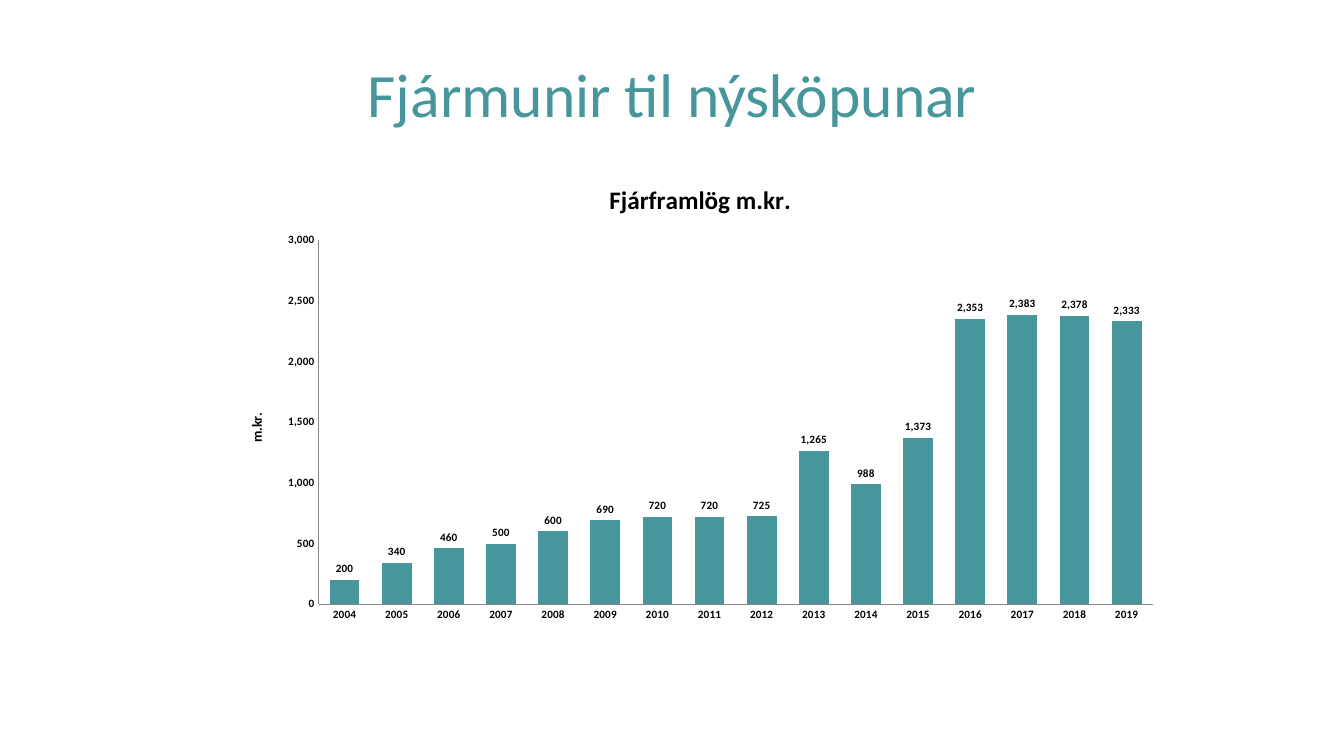
from lxml import etree
from pptx import Presentation
from pptx.chart.data import CategoryChartData
from pptx.dml.color import RGBColor
from pptx.enum import chart as ch, text
from pptx.oxml.ns import qn
from pptx.util import Inches, Pt

TEAL = RGBColor(0x46, 0x96, 0x9B)
BLACK = RGBColor(0, 0, 0)
GREY = RGBColor(0x86, 0x86, 0x86)
FUNDING = [200, 340, 460, 500, 600, 690, 720, 720, 725, 1265, 988, 1373,
           2353, 2383, 2378, 2333]
NUMBER_FORMAT = "#,##0"


def style(font, size, color=BLACK, bold=True):
    font.name = "Calibri"
    font.size = Pt(size)
    font.bold = bold
    font.color.rgb = color


prs = Presentation()
prs.slide_width, prs.slide_height = Inches(13.33), Inches(7.5)
s = prs.slides.add_slide(prs.slide_layouts[6])

# Heading
tf = s.shapes.add_textbox(Inches(0.67), Inches(0.3), Inches(12), Inches(1.25)).text_frame
tf.word_wrap = True
tf.vertical_anchor = text.MSO_ANCHOR.MIDDLE
tf.text = "Fjármunir til nýsköpunar"
p = tf.paragraphs[0]
p.alignment = text.PP_ALIGN.CENTER
style(p.runs[0].font, 44, TEAL, bold=False)

# Funding per year
data = CategoryChartData(number_format=NUMBER_FORMAT)
data.categories = [str(year) for year in range(2004, 2020)]
data.add_series("Fjárframlög m.kr.", FUNDING)
chart = s.shapes.add_chart(ch.XL_CHART_TYPE.COLUMN_CLUSTERED, Inches(2.26), Inches(1.62),
                           Inches(9.37), Inches(4.65), data).chart
style(chart.font, 10, bold=False)
chart.has_legend = False
chart.has_title = True
chart.chart_title.include_in_layout = False

plot = chart.plots[0]
plot.gap_width = 75
plot.vary_by_categories = False
fill = plot.series[0].format.fill
fill.solid()
fill.fore_color.rgb = TEAL
plot.has_data_labels = True
labels = plot.data_labels
labels.show_value = True
labels.number_format = NUMBER_FORMAT
labels.number_format_is_linked = False
labels.position = ch.XL_LABEL_POSITION.OUTSIDE_END
style(labels.font, 8)

value_axis = chart.value_axis
value_axis.has_major_gridlines = False
value_axis.minimum_scale, value_axis.maximum_scale = 0, 3000
value_axis.major_unit = 500
value_axis.tick_labels.number_format = NUMBER_FORMAT
value_axis.tick_labels.number_format_is_linked = False
for axis in (chart.category_axis, value_axis):
    axis.major_tick_mark = axis.minor_tick_mark = ch.XL_TICK_MARK.NONE
    axis.format.line.color.rgb = GREY
    axis.format.line.width = Pt(0.75)
    style(axis.tick_labels.font, 8)

for title, words, size in ((chart.chart_title, "Fjárframlög m.kr.", 18),
                           (value_axis.axis_title, "m.kr.", 10)):
    title.text_frame.text = words
    style(title.text_frame.paragraphs[0].runs[0].font, size)

# Fixed inner plot area, as fractions of the chart frame
plot_area = chart._chartSpace.chart.plotArea
for old in plot_area.findall(qn("c:layout")):
    plot_area.remove(old)
layout = etree.Element(qn("c:layout"))
plot_area.insert(0, layout)
manual = etree.SubElement(layout, qn("c:manualLayout"))
for tag, val in (("layoutTarget", "inner"), ("xMode", "edge"), ("yMode", "edge"),
                 ("x", "0.096"), ("y", "0.164"), ("w", "0.883"), ("h", "0.777")):
    etree.SubElement(manual, qn("c:" + tag)).set("val", val)

prs.save("out.pptx")
